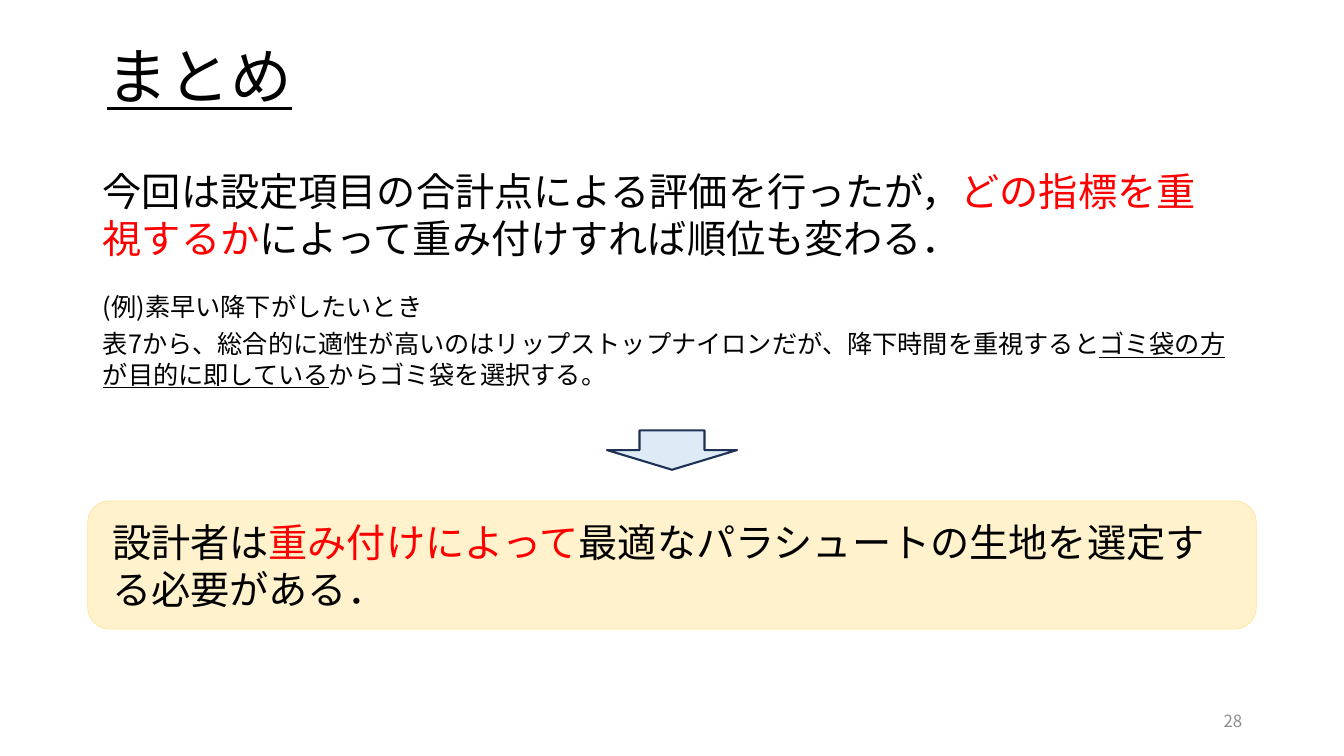
from lxml import etree
from pptx import Presentation
from pptx.dml.color import RGBColor
from pptx.enum.lang import MSO_LANGUAGE_ID as Language
from pptx.enum.shapes import MSO_SHAPE as Shape
from pptx.enum.text import MSO_ANCHOR as Anchor, MSO_AUTO_SIZE as AutoSize, PP_ALIGN as Align
from pptx.oxml.ns import qn
from pptx.util import Inches, Pt

FONT = "Noto Sans CJK JP"
BLACK = RGBColor(0x00, 0x00, 0x00)
RED = RGBColor(0xFF, 0x00, 0x00)
GRAY = RGBColor(0x8C, 0x8C, 0x8C)
CREAM = RGBColor(0xFF, 0xF2, 0xCC)
YELLOW = RGBColor(0xFF, 0xE6, 0x99)
PALE_BLUE = RGBColor(0xDE, 0xEB, 0xF7)
NAVY = RGBColor(0x1E, 0x32, 0x56)

# Content: runs are (text, colour, underlined)
TITLE = [("まとめ", BLACK, True)]
PAGE_NUMBER = [("28", GRAY, False)]
CONCLUSION = [
    ("設計者は", BLACK, False),
    ("重み付けによって", RED, False),
    ("最適なパラシュートの生地を選定する必要がある．", BLACK, False),
]
# Body paragraphs are (size, space before, runs)
BODY = [
    (28, 0, [
        ("今回は設定項目の合計点による評価を行ったが，", BLACK, False),
        ("どの指標を重視するか", RED, False),
        ("によって重み付けすれば順位も変わる．", BLACK, False),
    ]),
    (18, 21.6, [("(例)素早い降下がしたいとき", BLACK, False)]),
    (18, 4.8, [
        ("表7から、総合的に適性が高いのはリップストップナイロンだが、降下時間を重視すると", BLACK, False),
        ("ゴミ袋の方が目的に即している", BLACK, True),
        ("からゴミ袋を選択する。", BLACK, False),
    ]),
]


def place(shape, left, top, width, height):
    shape.left, shape.top = Inches(left), Inches(top)
    shape.width, shape.height = Inches(width), Inches(height)


def prepare_frame(shape, anchor):
    frame = shape.text_frame
    frame.word_wrap = True
    frame.auto_size = AutoSize.NONE
    frame.vertical_anchor = anchor
    return frame


def write_runs(paragraph, runs, size, align=Align.LEFT, before=0, spacing=1.0):
    paragraph.alignment = align
    paragraph.space_before = Pt(before)
    paragraph.line_spacing = spacing
    for text, colour, underlined in runs:
        run = paragraph.add_run()
        run.text = text
        font = run.font
        font.size = Pt(size)
        font.color.rgb = colour
        font.underline = underlined
        font.language_id = Language.JAPANESE
        font.name = FONT
        latin = run._r.rPr.find(qn("a:latin"))
        east_asian = etree.Element(qn("a:ea"), typeface=FONT)
        latin.addnext(east_asian)


def remove_bullet(paragraph):
    properties = paragraph._p.get_or_add_pPr()
    properties.set("marL", "0")
    properties.set("indent", "0")
    etree.SubElement(properties, qn("a:buNone"))


def add_filled_shape(slide, kind, box, fill, line, line_width):
    shape = slide.shapes.add_shape(kind, *map(Inches, box))
    shape.shadow.inherit = False
    shape.fill.solid()
    shape.fill.fore_color.rgb = fill
    shape.line.color.rgb = line
    shape.line.width = Pt(line_width)
    return shape


presentation = Presentation()
presentation.slide_width, presentation.slide_height = Inches(13.33), Inches(7.5)
slide = presentation.slides.add_slide(presentation.slide_layouts[1])

# Title
title = slide.shapes.title
place(title, 0.96, 0.06, 11.5, 1.45)
write_runs(prepare_frame(title, Anchor.MIDDLE).paragraphs[0], TITLE, 44, spacing=0.9)

# Body text with the example
body = slide.placeholders[1]
place(body, 0.92, 1.61, 11.35, 2.36)
body_frame = prepare_frame(body, Anchor.TOP)
for index, (size, before, runs) in enumerate(BODY):
    paragraph = body_frame.add_paragraph() if index else body_frame.paragraphs[0]
    remove_bullet(paragraph)
    write_runs(paragraph, runs, size, before=before)

# Arrow leading to the conclusion
add_filled_shape(slide, Shape.DOWN_ARROW, (6.02, 4.27, 1.29, 0.39), PALE_BLUE, NAVY, 1.5)

# Conclusion panel
panel = add_filled_shape(
    slide, Shape.ROUNDED_RECTANGLE, (0.87, 4.97, 11.59, 1.27), CREAM, YELLOW, 0.5)
panel_frame = prepare_frame(panel, Anchor.MIDDLE)
panel_frame.margin_left, panel_frame.margin_right = Inches(0.18), Inches(0.23)
write_runs(panel_frame.paragraphs[0], CONCLUSION, 28)

# Page number
number = slide.shapes.add_textbox(*map(Inches, (9.42, 6.95, 3, 0.4)))
write_runs(prepare_frame(number, Anchor.MIDDLE).paragraphs[0], PAGE_NUMBER, 12, Align.RIGHT)

presentation.save("out.pptx")
